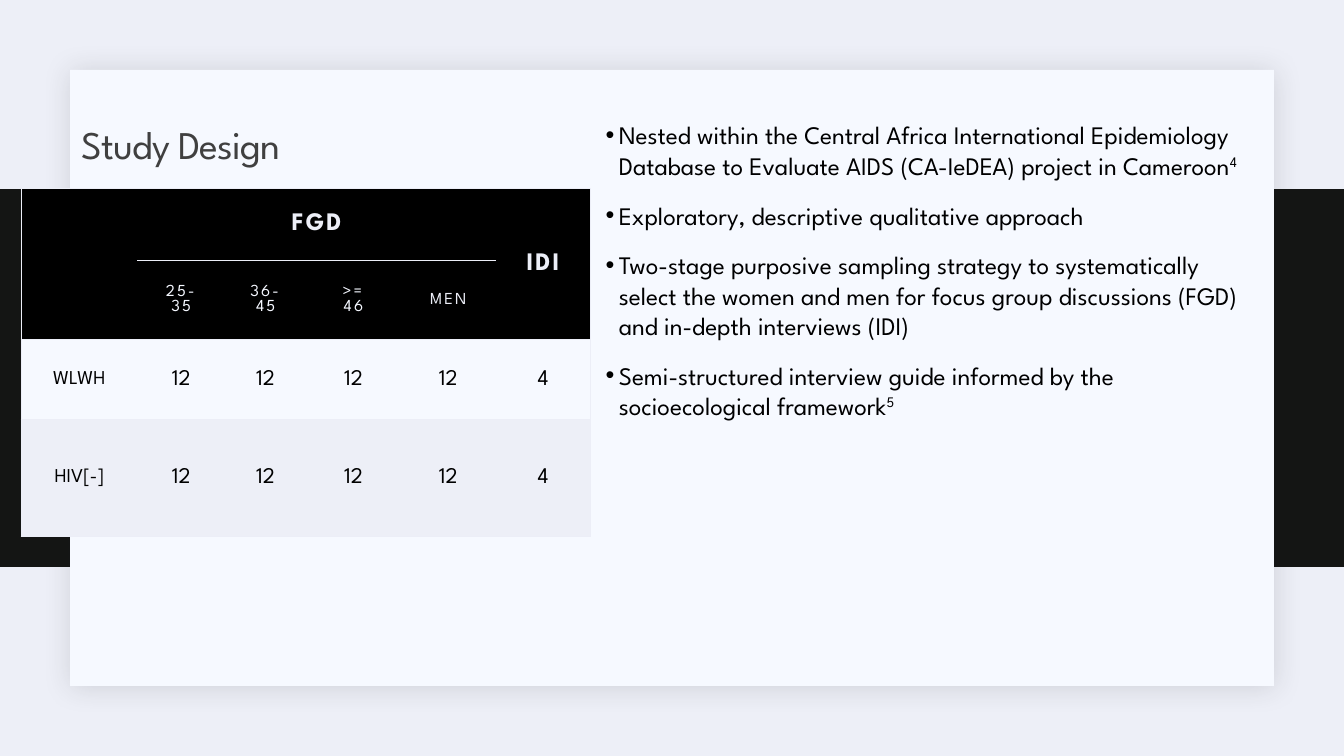
from lxml import etree
from pptx import Presentation
from pptx.dml.color import RGBColor
from pptx.enum.shapes import MSO_SHAPE
from pptx.enum.text import MSO_ANCHOR, PP_ALIGN
from pptx.oxml.ns import qn
from pptx.util import Pt

RECT = MSO_SHAPE.RECTANGLE
MIDDLE, TOP = MSO_ANCHOR.MIDDLE, MSO_ANCHOR.TOP
CENTER = PP_ALIGN.CENTER
FONT = "League Spartan"
BLACK, PALE, PANEL, RULE = "000000", "EDEFF7", "F6F9FF", "ECEEF7"

BULLETS = [
    ("Nested within the Central Africa International Epidemiology Database "
     "to Evaluate AIDS (CA-IeDEA) project in Cameroon", "4"),
    ("Exploratory, descriptive qualitative approach", ""),
    ("Two-stage purposive sampling strategy to systematically select the women "
     "and men for focus group discussions (FGD) and in-depth interviews (IDI)", ""),
    ("Semi-structured interview guide informed by the socioecological framework", "5"),
]
COLUMNS = [83, 62.6, 57.9, 67.7, 67.7, 67.7]
ROWS = [46.8, 52.6, 56.9, 83.5]
MARGINS = [14.8, 14, 18, 18]
CELLS = [
    ["", "FGD", "", "", "", "IDI"],
    ["", "25-35", "36-45", ">= 46", "MEN", ""],
    ["WLWH", "12", "12", "12", "12", "4"],
    ["HIV[-]", "12", "12", "12", "12", "4"],
]
FILLS = [BLACK, BLACK, PANEL, PALE]


def rgb(color):
    """Return the colour for a hex string."""
    return RGBColor.from_string(color)


def add_child(parent, tag, **attrs):
    """Append a drawing element with attributes and return it."""
    el = etree.SubElement(parent, qn(tag))
    for name, value in attrs.items():
        el.set(name, str(value))
    return el


def add_text(p, text, size=18, color=BLACK, bold=False, spacing=0, raised=0):
    """Add a formatted run to a paragraph."""
    r = p.add_run()
    r.text = text
    r.font.name, r.font.size, r.font.bold = FONT, Pt(size), bold
    r.font.color.rgb = rgb(color)
    rPr = r.font._element
    if spacing:
        rPr.set("spc", str(int(spacing * 100)))
    if raised:
        rPr.set("baseline", str(raised * 1000))


def add_panel(s, x, y, w, h, color):
    """Add a plain filled rectangle."""
    sp = s.shapes.add_shape(RECT, Pt(x), Pt(y), Pt(w), Pt(h))
    sp.shadow.inherit = False
    sp.fill.solid()
    sp.fill.fore_color.rgb = rgb(color)
    sp.line.fill.background()
    return sp


def add_glow(sp, color, alpha, blur, dist, angle):
    """Give a shape a soft outer shadow."""
    effects = sp._element.spPr.find(qn("a:effectLst"))
    shadow = add_child(effects, "a:outerShdw", blurRad=Pt(blur), dist=Pt(dist),
                       dir=angle * 60000, algn="ctr", rotWithShape=0)
    tint = add_child(shadow, "a:srgbClr", val=color)
    add_child(tint, "a:alpha", val=alpha * 1000)


def add_box(s, x, y, w, h, anchor=TOP, inset=7.2):
    """Add a wrapping text box and return its text frame."""
    tf = s.shapes.add_textbox(Pt(x), Pt(y), Pt(w), Pt(h)).text_frame
    tf.word_wrap = True
    tf.vertical_anchor = anchor
    tf.margin_left = tf.margin_right = Pt(inset)
    return tf


def add_bullets(tf, items):
    """Fill a text frame with bulleted items and raised citation numbers."""
    for i, (text, citation) in enumerate(items):
        p = tf.add_paragraph() if i else tf.paragraphs[0]
        p.space_before, p.space_after = Pt(12), Pt(2)
        pPr = p._p.get_or_add_pPr()
        pPr.set("marL", str(Pt(13.5)))
        pPr.set("indent", str(Pt(-9.5)))
        add_child(add_child(pPr, "a:buClr"), "a:srgbClr", val=BLACK)
        add_child(pPr, "a:buFont", typeface="Arial")
        add_child(pPr, "a:buChar", char="•")
        add_text(p, text)
        if citation:
            add_text(p, citation, raised=30)


def set_borders(cell, sides):
    """Draw thin rules on the named sides of a cell and clear the others."""
    tcPr = cell._tc.get_or_add_tcPr()
    for i, side in enumerate("LRTB"):
        ln = etree.Element(qn(f"a:ln{side}"), w=str(Pt(1)))
        if side in sides:
            add_child(add_child(ln, "a:solidFill"), "a:srgbClr", val=RULE)
        else:
            add_child(ln, "a:noFill")
        tcPr.insert(i, ln)


def cell_format(row, col):
    """Return the text format for a table position."""
    if row == 0:
        return dict(size=18, color=RULE, bold=True, spacing=1.5)
    if row == 1:
        return dict(size=12, color=RULE if col == 4 else "F5F8FF", spacing=1.5)
    return dict(size=16 if col else 14)


def add_sample_table(s, x, y):
    """Add the table of group discussions and interviews."""
    last = len(COLUMNS) - 1
    table = s.shapes.add_table(len(ROWS), len(COLUMNS), Pt(x), Pt(y),
                               Pt(sum(COLUMNS)), Pt(sum(ROWS))).table
    for column, width in zip(table.columns, COLUMNS):
        column.width = Pt(width)
    for row, height in zip(table.rows, ROWS):
        row.height = Pt(height)
    table.cell(0, 0).merge(table.cell(1, 0))
    table.cell(0, 1).merge(table.cell(0, last - 1))
    table.cell(0, last).merge(table.cell(1, last))
    for i, texts in enumerate(CELLS):
        for j, text in enumerate(texts):
            cell = table.cell(i, j)
            cell.fill.solid()
            cell.fill.fore_color.rgb = rgb(FILLS[i])
            set_borders(cell, "TB" + "L" * (j == 0) + "R" * (j == last))
            if text:
                cell.vertical_anchor = MIDDLE
                cell.margin_left = cell.margin_right = Pt(17.5)
                cell.margin_top = cell.margin_bottom = Pt(MARGINS[i])
                p = cell.text_frame.paragraphs[0]
                p.alignment = CENTER
                add_text(p, text, **cell_format(i, j))


def main():
    """Build the study design slide."""
    prs = Presentation()
    prs.slide_width, prs.slide_height = Pt(960), Pt(540)
    s = prs.slides.add_slide(prs.slide_layouts[6])
    s.background.fill.solid()
    s.background.fill.fore_color.rgb = rgb(PALE)

    add_panel(s, 0, 135, 960, 270, "141514")
    card = add_panel(s, 50, 50, 860, 440, PANEL)
    add_glow(card, "1F2125", alpha=15, blur=20, dist=2, angle=45)

    p = add_box(s, 51, 82, 450, 46, anchor=MIDDLE).paragraphs[0]
    p.line_spacing = 0.9
    add_text(p, "Study Design", size=28, color="404040", spacing=-0.5)
    add_bullets(add_box(s, 428.5, 82, 472.5, 384, inset=0), BULLETS)
    add_sample_table(s, 15.2, 134.8)
    prs.save("out.pptx")


if __name__ == "__main__":
    main()
